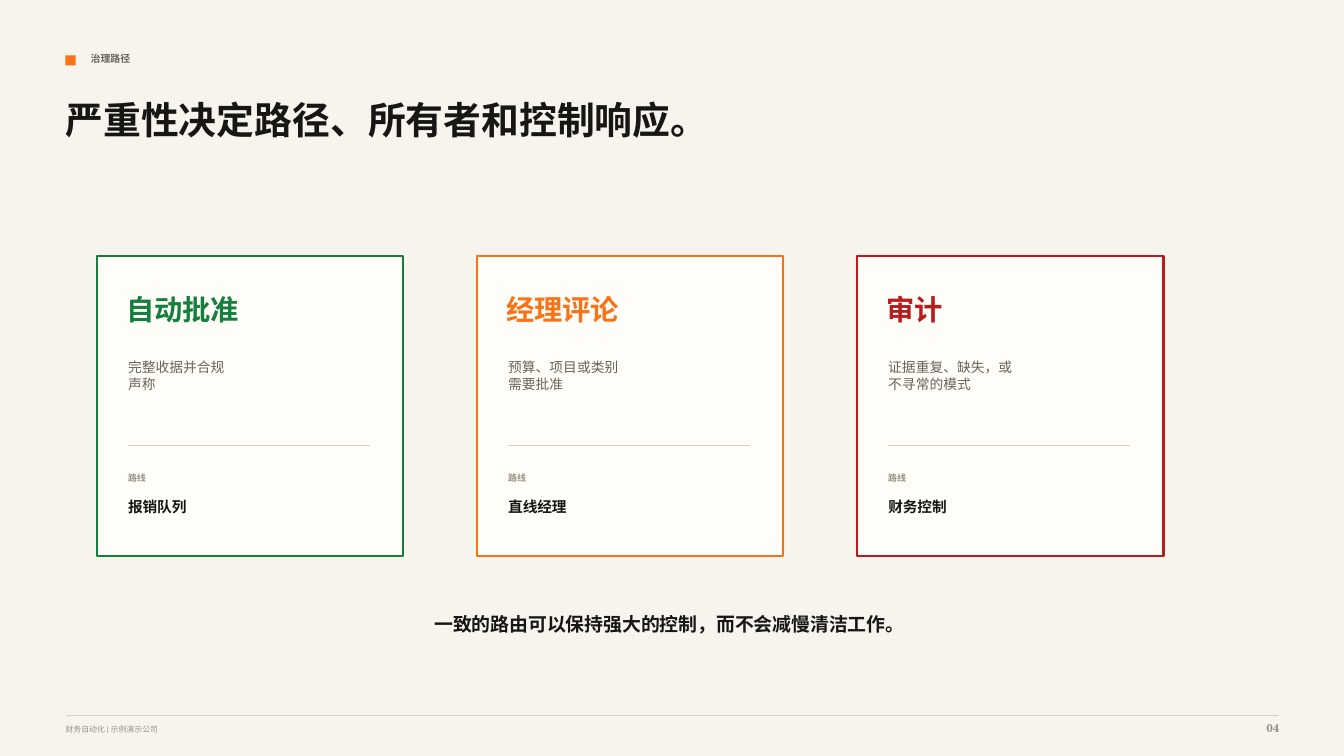
from lxml import etree
from pptx import Presentation
from pptx.dml.color import RGBColor
from pptx.enum.shapes import MSO_CONNECTOR, MSO_SHAPE
from pptx.enum.text import MSO_ANCHOR, MSO_AUTO_SIZE, PP_ALIGN
from pptx.oxml.ns import qn
from pptx.util import Inches, Pt

RECTANGLE = MSO_SHAPE.RECTANGLE
STRAIGHT = MSO_CONNECTOR.STRAIGHT
TOP = MSO_ANCHOR.TOP
NO_AUTOFIT = MSO_AUTO_SIZE.NONE
LEFT, CENTER, RIGHT = PP_ALIGN.LEFT, PP_ALIGN.CENTER, PP_ALIGN.RIGHT

PAPER = RGBColor(0xF7, 0xF4, 0xEE)
CARD = RGBColor(0xFF, 0xFD, 0xF8)
INK = RGBColor(0x17, 0x16, 0x14)
GRAY = RGBColor(0x69, 0x63, 0x5A)
MUTED = RGBColor(0x9A, 0x91, 0x84)
RULE = RGBColor(0xD9, 0xD0, 0xC3)
GREEN = RGBColor(0x15, 0x80, 0x3D)
ORANGE = RGBColor(0xF9, 0x73, 0x16)
RED = RGBColor(0xB9, 0x1C, 0x1C)

SANS, SERIF = "Roboto", "TeX Gyre Schola"
SLIDE_W, SLIDE_H = 13.33, 7.5
MARGIN = 0.65
CARD_W, CARD_H, CARD_PITCH = 3.04, 2.98, 3.77

FRAME_FORMAT = {
    "margin_left": 0, "margin_top": 0, "margin_right": 0, "margin_bottom": 0,
    "word_wrap": True, "auto_size": NO_AUTOFIT, "vertical_anchor": TOP,
}

ROUTES = [
    ("自动批准", ["完整收据并合规", "声称"], "报销队列", GREEN),
    ("经理评论", ["预算、项目或类别", "需要批准"], "直线经理", ORANGE),
    ("审计", ["证据重复、缺失，或", "不寻常的模式"], "财务控制", RED),
]


def write_text(frame, lines, size, font, color, bold=True, align=LEFT):
    for key, value in FRAME_FORMAT.items():
        setattr(frame, key, value)
    frame.text = "\n".join(lines)
    font_format = {"size": Pt(size), "name": font, "bold": bold}
    for paragraph in frame.paragraphs:
        paragraph.alignment = align
        for run in paragraph.runs:
            for key, value in font_format.items():
                setattr(run.font, key, value)
            run.font.color.rgb = color


def add_text(slide, box, lines, *style, **options):
    label = slide.shapes.add_textbox(*map(Inches, box))
    write_text(label.text_frame, lines, *style, **options)


def add_block(slide, box, fill, outline=None):
    block = slide.shapes.add_shape(RECTANGLE, *map(Inches, box))
    block.shadow.inherit = False
    block.fill.solid()
    block.fill.fore_color.rgb = fill
    if outline is None:
        block.line.fill.background()
    else:
        block.line.color.rgb = outline
        block.line.width = Pt(1.5)


def add_rule(slide, x, y, width):
    rule = slide.shapes.add_connector(
        STRAIGHT, Inches(x), Inches(y), Inches(x + width), Inches(y))
    rule.line.color.rgb = RULE
    rule.line.width = Pt(0.75)
    properties = rule._element.spPr
    etree.SubElement(properties, qn("a:effectLst"))


def draw_header(slide, x, y):
    # Section marker and label
    add_block(slide, (x, y + 0.03, 0.1, 0.1), ORANGE)
    add_text(slide, (x + 0.25, y, 5.83, 0.19), ["治理路径"], 7.1, SANS, GRAY)
    # Slide title
    title = slide.shapes.title
    title.left, title.top = Inches(x), Inches(y + 0.44)
    title.width, title.height = Inches(9.38), Inches(1.02)
    write_text(title.text_frame, ["严重性决定路径、所有者和控制响应。"], 27, SERIF, INK)


def draw_route_card(slide, x, y, name, conditions, owner, accent):
    inner = x + 0.31
    add_block(slide, (x, y, CARD_W, CARD_H), CARD, accent)
    # Severity and its conditions
    add_text(slide, (x + 0.29, y + 0.36, 2.29, 0.35), [name], 20.2, SERIF, accent)
    add_text(slide, (inner, y + 1.02, 2.33, 0.52), conditions, 9.8, SANS, GRAY, bold=False)
    # Route owner
    add_rule(slide, inner, y + 1.88, 2.4)
    add_text(slide, (inner, y + 2.15, 1.67, 0.15), ["路线"], 6.4, SANS, MUTED)
    add_text(slide, (inner, y + 2.4, 2.29, 0.23), [owner], 10.5, SANS, INK)


def draw_footer(slide, x, y, width):
    add_rule(slide, x, y, width)
    add_text(slide, (x, y + 0.09, 7.92, 0.15), ["财务自动化 | 示例演示公司"],
             5.6, SANS, MUTED, bold=False)
    add_text(slide, (x + width - 0.5, y + 0.05, 0.5, 0.19), ["04"],
             8.2, SERIF, MUTED, align=RIGHT)


def main():
    deck = Presentation()
    deck.slide_width, deck.slide_height = Inches(SLIDE_W), Inches(SLIDE_H)
    slide = deck.slides.add_slide(deck.slide_layouts.get_by_name("Title Only"))
    slide.background.fill.solid()
    slide.background.fill.fore_color.rgb = PAPER

    draw_header(slide, MARGIN, 0.52)
    for index, route in enumerate(ROUTES):
        draw_route_card(slide, 0.96 + index * CARD_PITCH, 2.54, *route)
    # Takeaway
    add_text(slide, (1.85, 6.08, 9.58, 0.29), ["一致的路由可以保持强大的控制，而不会减慢清洁工作。"],
             13.5, SERIF, INK, align=CENTER)
    draw_footer(slide, MARGIN, 7.1, 12.04)
    deck.save("out.pptx")


if __name__ == "__main__":
    main()
